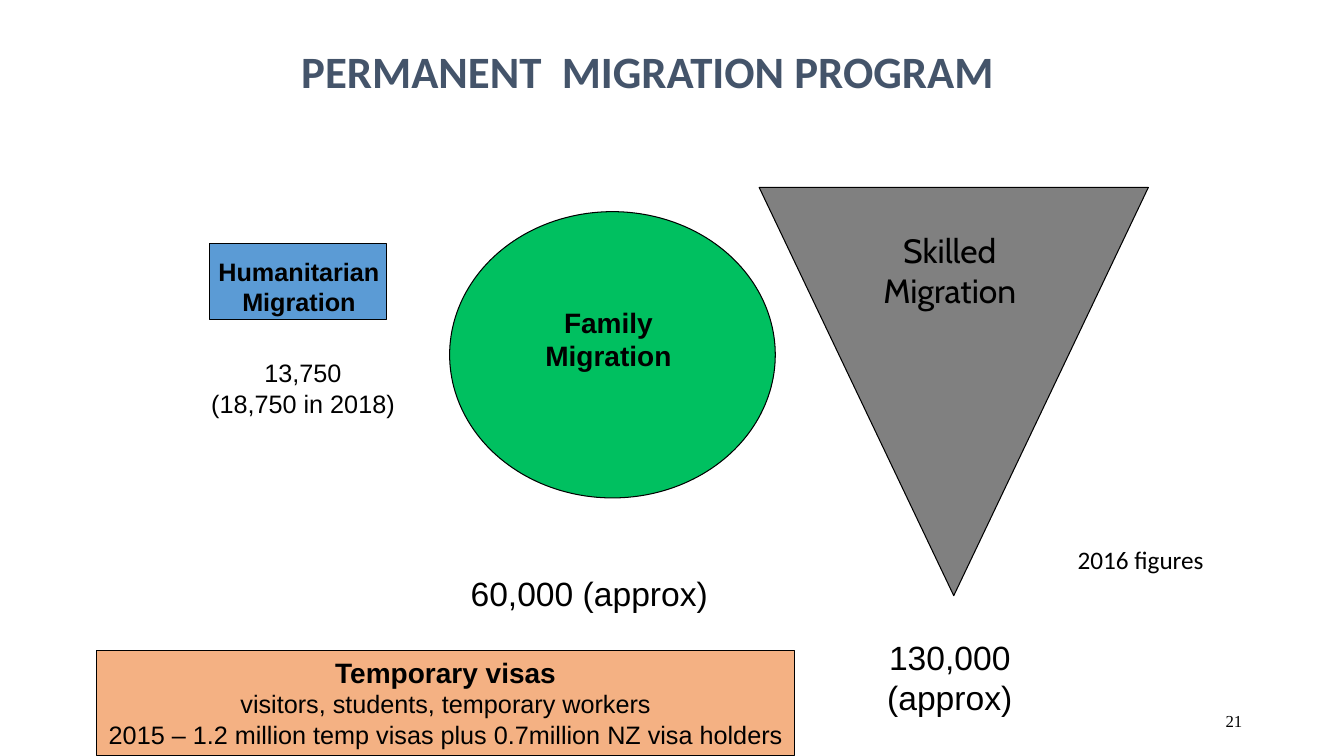
"""Build the permanent migration program slide."""
from dataclasses import dataclass

from pptx import Presentation
from pptx.dml.color import RGBColor
from pptx.enum.shapes import MSO_SHAPE
from pptx.enum.text import MSO_ANCHOR, PP_ALIGN
from pptx.util import Emu, Pt
from lxml.etree import Element

EMU_PER_PX = 9144
COLOURS = {
    "black": "000000",
    "title": "44546A",
    "humanitarian": "5B9BD5",
    "family": "00C060",
    "skilled": "808080",
    "temporary": "F4B183",
}


@dataclass(frozen=True)
class Box:
    left: int
    top: int
    width: int
    height: int

    def emu(self) -> tuple[Emu, Emu, Emu, Emu]:
        return px(self.left), px(self.top), px(self.width), px(self.height)


@dataclass(frozen=True)
class Stream:
    box: Box
    outline: MSO_SHAPE
    colour: str
    flipped: bool = False


@dataclass(frozen=True)
class Line:
    text: str
    size: int
    bold: bool = False
    font: str = "Arial"
    colour: str = "black"


@dataclass(frozen=True)
class Label:
    box: Box
    lines: tuple[Line, ...]
    align: PP_ALIGN = PP_ALIGN.CENTER
    anchor: MSO_ANCHOR = MSO_ANCHOR.TOP
    wrap: bool = True
    fill: str | None = None


STREAMS = (
    Stream(Box(208, 242, 175, 75), MSO_SHAPE.RECTANGLE, "humanitarian"),
    Stream(Box(753, 186, 386, 405), MSO_SHAPE.ISOSCELES_TRIANGLE, "skilled", flipped=True),
    Stream(Box(446, 210, 323, 284), MSO_SHAPE.OVAL, "family"),
)

LABELS = (
    Label(Box(178, 38, 929, 64),
          (Line("PERMANENT  MIGRATION PROGRAM", 32, True, "Calibri", "title"),)),
    Label(Box(194, 249, 205, 71), (Line("Humanitarian Migration", 18, True),)),
    Label(Box(525, 298, 157, 107), (Line("Family Migration", 20, True),)),
    Label(Box(842, 223, 200, 90),
          (Line("Skilled", 24, font="Cabin"), Line("Migration", 24, font="Cabin"))),
    Label(Box(192, 350, 217, 71),
          (Line("13,750", 18), Line("(18,750 in 2018)", 18))),
    Label(Box(423, 563, 323, 53), (Line("60,000 (approx)", 24),)),
    Label(Box(808, 627, 268, 91),
          (Line("130,000", 24), Line("(approx)", 24))),
    Label(Box(96, 645, 692, 104),
          (Line("Temporary visas", 20, True),
           Line("visitors, students, temporary workers", 18),
           Line("2015 – 1.2 million temp visas plus 0.7million NZ visa holders", 18)),
          fill="temporary"),
    Label(Box(1059, 535, 147, 40), (Line("2016 figures", 18, font="Calibri"),),
          align=PP_ALIGN.LEFT, wrap=False),
    Label(Box(942, 695, 300, 40), (Line("21", 12, font="Times New Roman"),),
          align=PP_ALIGN.RIGHT, anchor=MSO_ANCHOR.MIDDLE),
)


def px(length: int) -> Emu:
    return Emu(length * EMU_PER_PX)


def rgb(name: str) -> RGBColor:
    return RGBColor.from_string(COLOURS[name])


def paint(part, colour: str, line_width: float) -> None:
    part.fill.solid()
    part.fill.fore_color.rgb = rgb(colour)
    part.line.color.rgb = rgb("black")
    part.line.width = Pt(line_width)


def draw_stream(slide, stream: Stream) -> None:
    figure = slide.shapes.add_shape(stream.outline, *stream.box.emu())
    figure.shadow.inherit = False
    paint(figure, stream.colour, 0.75)
    if stream.flipped:
        figure.element.spPr.xfrm.set("flipV", "1")


def draw_label(slide, label: Label) -> None:
    caption = slide.shapes.add_textbox(*label.box.emu())
    if label.fill:
        paint(caption, label.fill, 0.5)
    frame = caption.text_frame
    frame.word_wrap = label.wrap
    frame.vertical_anchor = label.anchor
    for index, line in enumerate(label.lines):
        paragraph = frame.add_paragraph() if index else frame.paragraphs[0]
        paragraph.text = line.text
        paragraph.alignment = label.align
        paragraph.font.name = line.font
        paragraph.font.size = Pt(line.size)
        paragraph.font.bold = line.bold
        paragraph.font.color.rgb = rgb(line.colour)


def main() -> None:
    deck = Presentation()
    deck.slide_width, deck.slide_height = px(1333), px(750)
    slide = deck.slides.add_slide(deck.slide_layouts[6])
    for stream in STREAMS:
        draw_stream(slide, stream)
    for label in LABELS:
        draw_label(slide, label)
    deck.save("out.pptx")


if __name__ == "__main__":
    main()
